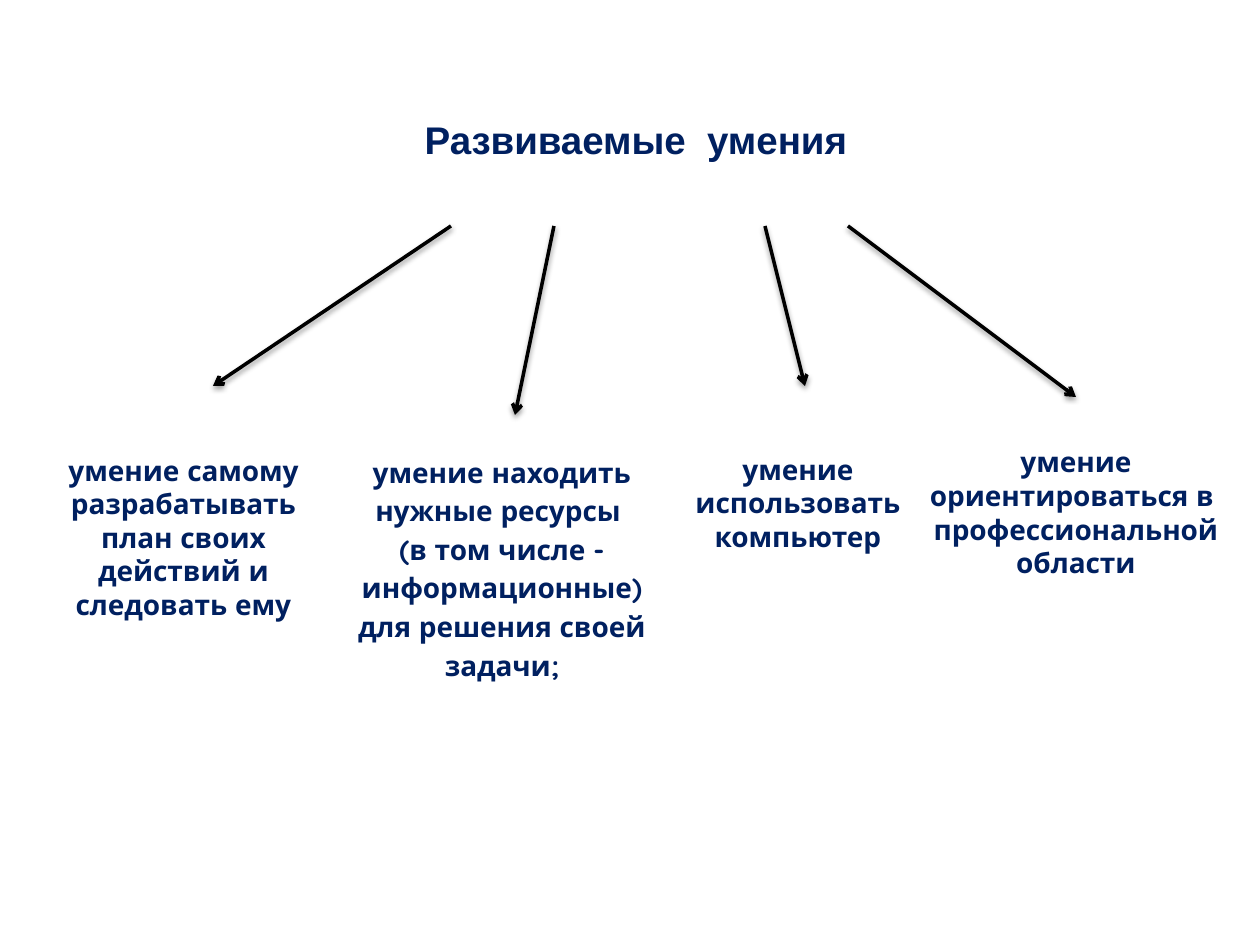
from dataclasses import dataclass

from lxml import etree
from pptx import Presentation
from pptx import util as u
from pptx.dml.color import RGBColor
from pptx.enum import shapes, text
from pptx.oxml import parse_xml
from pptx.oxml.ns import nsdecls, qn

PX_PER_INCH = 126
ARROW_TOP = 226
NAVY = RGBColor(0x00, 0x20, 0x60)
WHITE = RGBColor(0xFF, 0xFF, 0xFF)
BLACK = RGBColor(0x00, 0x00, 0x00)
SHADOW = (
    f'<a:effectLst {nsdecls("a")}>'
    '<a:outerShdw blurRad="40000" dist="20000" dir="5400000" rotWithShape="0">'
    '<a:srgbClr val="000000"><a:alpha val="38000"/></a:srgbClr>'
    '</a:outerShdw></a:effectLst>'
)


@dataclass(frozen=True)
class Box:
    left: int
    top: int
    width: int
    height: int


@dataclass(frozen=True)
class Skill:
    box: Box
    paragraphs: tuple[str, ...]
    arrow_start: int
    arrow_end: tuple[int, int]
    spacing: float | None = None


TITLE_BOX = Box(392, 76, 488, 126)
SKILLS = (
    Skill(Box(35, 433, 297, 208),
          ("умение самому разрабатывать план своих действий и следовать ему",),
          451, (213, 386)),
    Skill(Box(343, 442, 318, 248),
          ("умение находить нужные ресурсы ",
           "(в том числе - информационные) для решения своей задачи;"),
          554, (515, 415), spacing=1.15),
    Skill(Box(679, 433, 238, 139),
          ("умение использовать компьютер",),
          765, (805, 386)),
    Skill(Box(917, 413, 318, 198),
          ("умение ориентироваться в  профессиональной области",),
          848, (1076, 397)),
)


def px(n: int) -> u.Emu:
    return u.Emu(round(n * 914400 / PX_PER_INCH))


def place(sp, box: Box) -> None:
    sp.left, sp.top = px(box.left), px(box.top)
    sp.width, sp.height = px(box.width), px(box.height)


def write(sp, paragraphs: tuple[str, ...], *, size: int, font: str,
          spacing: float | None = None) -> None:
    sp.fill.solid()
    sp.fill.fore_color.rgb = WHITE
    sp.line.color.rgb = WHITE
    sp.line.width = u.Pt(2)
    tf = sp.text_frame
    tf.word_wrap = True
    tf.auto_size = text.MSO_AUTO_SIZE.NONE
    tf.vertical_anchor = text.MSO_ANCHOR.MIDDLE
    for i, line in enumerate(paragraphs):
        p = tf.add_paragraph() if i else tf.paragraphs[0]
        p.alignment = text.PP_ALIGN.CENTER
        if spacing:
            p.line_spacing = spacing
        r = p.add_run()
        r.text = line
        r.font.size = u.Pt(size)
        r.font.name = font
        r.font.bold = True
        r.font.color.rgb = NAVY


def draw_skill(slide, skill: Skill) -> None:
    sp = slide.shapes.add_shape(shapes.MSO_SHAPE.RECTANGLE, 0, 0, 0, 0)
    place(sp, skill.box)
    sp.shadow.inherit = False
    write(sp, skill.paragraphs, size=16, font="Quicksand", spacing=skill.spacing)


def draw_arrow(slide, skill: Skill) -> None:
    x, y = skill.arrow_end
    arrow = slide.shapes.add_connector(
        shapes.MSO_CONNECTOR.STRAIGHT,
        px(skill.arrow_start), px(ARROW_TOP), px(x), px(y))
    arrow.line.color.rgb = BLACK
    arrow.line.width = u.Pt(2)
    etree.SubElement(arrow.line._get_or_add_ln(), qn("a:tailEnd"), type="arrow")
    arrow._element.spPr.append(parse_xml(SHADOW))


def main() -> None:
    prs = Presentation()
    prs.slide_width, prs.slide_height = u.Inches(10), u.Inches(7.5)
    slide = prs.slides.add_slide(prs.slide_layouts[5])
    title = slide.shapes.title
    place(title, TITLE_BOX)
    write(title, ("Развиваемые  умения",), size=22, font="Arial")
    for skill in SKILLS:
        draw_skill(slide, skill)
    for skill in SKILLS:
        draw_arrow(slide, skill)
    prs.save("out.pptx")


if __name__ == "__main__":
    main()
